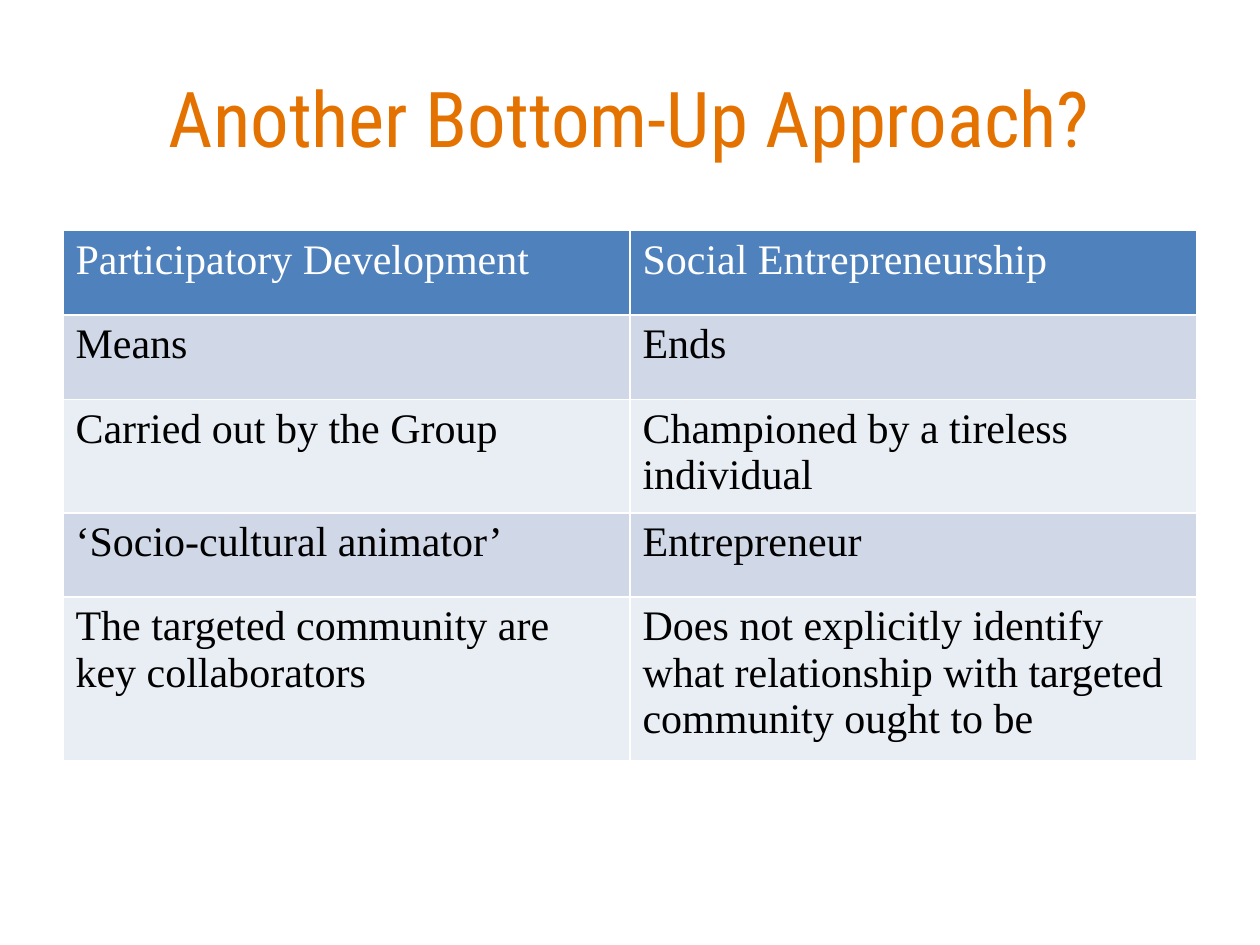
"""Build a slide comparing participatory development with social entrepreneurship."""
from dataclasses import dataclass

from pptx import Presentation
from pptx import util as u
from pptx.dml.color import RGBColor
from pptx.enum import text


@dataclass(frozen=True)
class Theme:
    title_font: str = "Roboto Condensed"
    body_font: str = "Times New Roman"
    title_size: int = 44
    body_size: int = 24
    title: str = "E47200"
    header_text: str = "FFFFFF"
    body_text: str = "000000"
    header_fill: str = "4F81BD"
    bands: tuple[str, str] = ("D0D8E8", "E9EDF4")


@dataclass(frozen=True)
class Comparison:
    participatory: str
    entrepreneurial: str
    height: float = 1.7


THEME = Theme()
LEFT, WIDTH = 1.27, 22.86
COMPARISONS = (
    Comparison("Participatory Development", "Social Entrepreneurship"),
    Comparison("Means", "Ends"),
    Comparison("Carried out by the Group", "Championed by a tireless individual"),
    Comparison("‘Socio-cultural animator’", "Entrepreneur"),
    Comparison(
        "The targeted community are key collaborators",
        "Does not explicitly identify what relationship with targeted community ought to be",
        height=2.95,
    ),
)


def write(frame, words: str, *, font: str, size: int, color: str, align=text.PP_ALIGN.LEFT) -> None:
    para = frame.paragraphs[0]
    para.alignment = align
    span = para.add_run()
    span.text = words
    span.font.name = font
    span.font.size = u.Pt(size)
    span.font.bold = False
    span.font.color.rgb = RGBColor.from_string(color)


def draw_title(page, words: str) -> None:
    box = page.shapes.add_textbox(u.Cm(LEFT), u.Cm(0.76), u.Cm(WIDTH), u.Cm(3.18))
    frame = box.text_frame
    frame.word_wrap = True
    frame.vertical_anchor = text.MSO_ANCHOR.MIDDLE
    write(frame, words, font=THEME.title_font, size=THEME.title_size,
          color=THEME.title, align=text.PP_ALIGN.CENTER)


def draw_comparisons(page, comparisons: tuple[Comparison, ...]) -> None:
    height = sum(comparison.height for comparison in comparisons)
    table = page.shapes.add_table(
        len(comparisons), 2, u.Cm(LEFT), u.Cm(4.65), u.Cm(WIDTH), u.Cm(height)
    ).table
    for index, comparison in enumerate(comparisons):
        table.rows[index].height = u.Cm(comparison.height)
        header = index == 0
        fill = THEME.header_fill if header else THEME.bands[(index - 1) % 2]
        color = THEME.header_text if header else THEME.body_text
        entries = (comparison.participatory, comparison.entrepreneurial)
        for cell, words in zip(table.rows[index].cells, entries):
            cell.fill.solid()
            cell.fill.fore_color.rgb = RGBColor.from_string(fill)
            write(cell.text_frame, words, font=THEME.body_font,
                  size=THEME.body_size, color=color)


def main() -> None:
    deck = Presentation()
    deck.slide_width, deck.slide_height = u.Cm(25.4), u.Cm(19.05)
    page = deck.slides.add_slide(deck.slide_layouts[6])
    draw_title(page, "Another Bottom-Up Approach?")
    draw_comparisons(page, COMPARISONS)
    deck.save("out.pptx")


if __name__ == "__main__":
    main()
